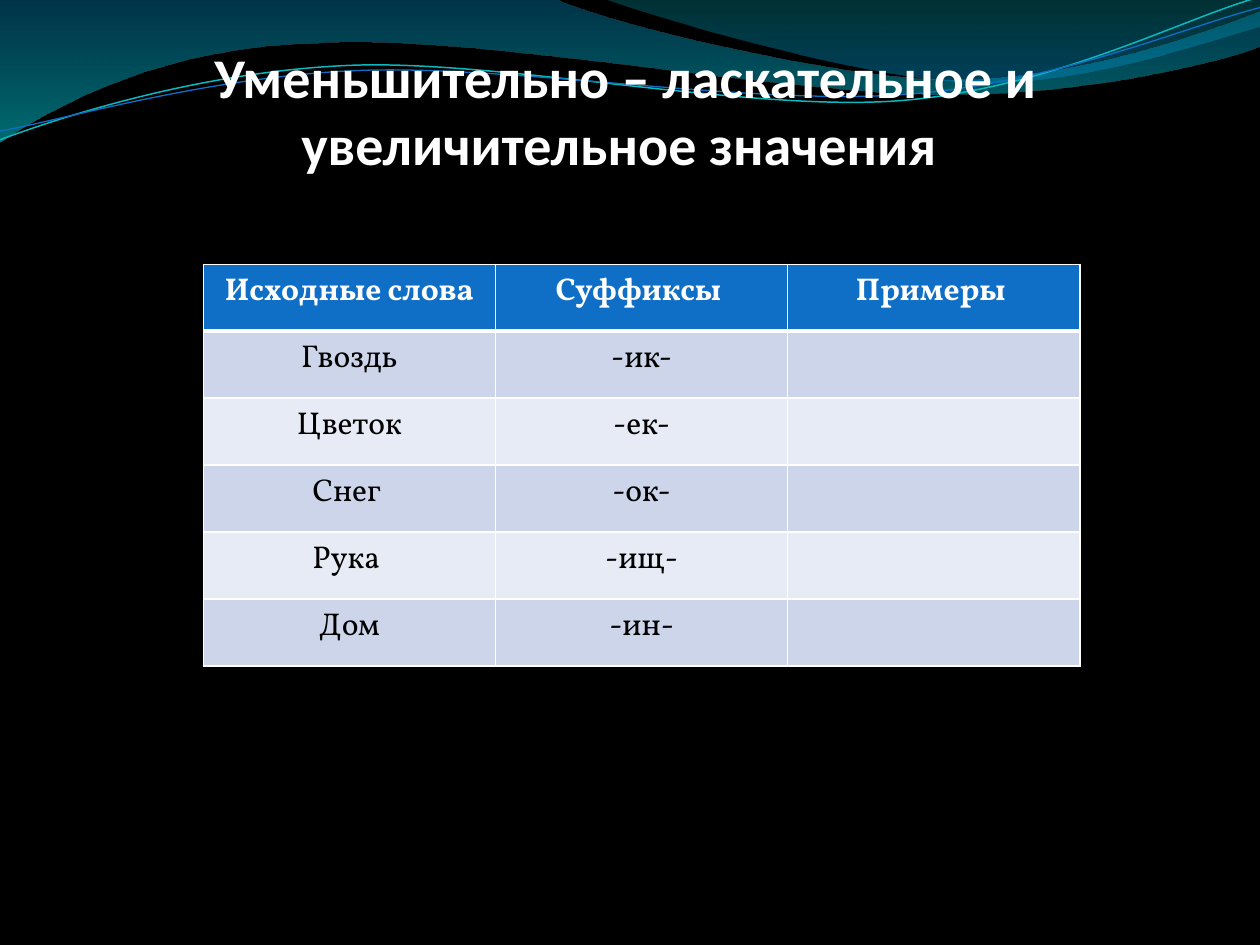
from lxml import etree
from pptx import Presentation
from pptx import util as u
from pptx.dml.color import RGBColor
from pptx.enum import text
from pptx.oxml.ns import qn

TITLE = "Уменьшительно – ласкательное и увеличительное значения "
ROWS = [
    ("Исходные слова", "Суффиксы ", "Примеры "),
    ("Гвоздь", "-ик-", ""),
    ("Цветок", "-ек-", ""),
    ("Снег ", "-ок-", ""),
    ("Рука ", "-ищ-", ""),
    ("Дом", "-ин-", ""),
]
HEAD, BANDS = "0F6FC6", ("CCD5EA", "E7EBF5")

# Outlines: a pair is a straight step, six numbers are a cubic curve.
# Gradient stops: position, colour, opacity in percent.
WAVES = [
    ([(0, 0), (316.8, -0.7), (342.7, 12.2, 478, 45.4, 545.8, 45.4),
      (614.2, 45.4, 689.8, 18.7, 720, 6.5), (720.7, 25.9),
      (709.9, 31.7, 626.4, 54.7, 537.1, 54),
      (447.8, 54, 275, 20.2, 185, 24.5),
      (92.9, 25.9, 33.1, 59.8, -0.7, 81.4), (0, 0)],
     [(0, "0074A1", 45), (1, "00C6CF", 55)]),
    ([(344.9, -0.7), (366.5, 7.9, 491, 44.6, 553.7, 46.8),
      (616.3, 49.7, 691.9, 23, 720, 15.1), (720, 0), (344.9, -0.7)],
     [(0, "00A1A9", 30), (0.8, "008BBF", 45)]),
]
LINES = [
    ([(0, 79.9), (34.6, 67, 113.8, 41, 199.4, 37.4),
      (284.4, 33.8, 427, 64.1, 513.4, 57.6),
      (599.8, 51.1, 675.4, 10.8, 718.6, -1.4)], "0AB8BF", 0.85),
    ([(0, 74.9), (33.8, 69.1, 118.1, 43.9, 203.8, 40.3),
      (290.2, 36.7, 429.8, 60.5, 516.2, 54),
      (601.9, 48.2, 677.5, 15.1, 720, 4.3)], "0F6FC6", 0.75),
]


def rgb(hex):
    return RGBColor.from_string(hex)


def draw(segs, close):
    """Lay every point as a straight step, then join threes into curves."""
    pts = [(u.Pt(s[i]), u.Pt(s[i + 1])) for s in segs
           for i in range(0, len(s), 2)]
    pen = slide.shapes.build_freeform(*pts[0])
    pen.add_line_segments(pts[1:], close=close)
    shape = pen.convert_to_shape()
    shape.shadow.inherit = False
    steps = iter(list(shape._element.iter(qn("a:lnTo"))))
    for seg in segs[1:]:
        step = next(steps)
        if len(seg) == 6:
            step.addprevious(curve := etree.Element(qn("a:cubicBezTo")))
            for part in (step, next(steps), next(steps)):
                curve.append(part[0])
                part.getparent().remove(part)
    return shape


def style(par, font, size, color, bold):
    par.alignment = text.PP_ALIGN.CENTER
    f = par.font
    f.name, f.size, f.bold = font, u.Pt(size), bold
    f.color.rgb = rgb(color)


def edge(cell, side, width):
    line = etree.SubElement(cell._tc.get_or_add_tcPr(), qn("a:ln" + side),
                            w=str(u.Pt(width)))
    fill = etree.SubElement(line, qn("a:solidFill"))
    etree.SubElement(fill, qn("a:srgbClr"), val="FFFFFF")


deck = Presentation()
deck.slide_width, deck.slide_height = u.Pt(720), u.Pt(540)
slide = deck.slides.add_slide(deck.slide_layouts[6])
back = slide.background.fill
back.solid()
back.fore_color.rgb = rgb("000000")

# Waves along the top
for segs, stops in WAVES:
    wave = draw(segs, True)
    wave.line.fill.background()
    wave.fill.gradient()
    wave.fill.gradient_angle = 270
    for stop, (pos, color, alpha) in zip(wave.fill.gradient_stops, stops):
        stop.position = pos
        stop.color.rgb = rgb(color)
        tint = stop._gs.find(qn("a:srgbClr"))
        etree.SubElement(tint, qn("a:alpha"), val=str(alpha * 1000))

# Thin lines over the waves
for segs, color, width in LINES:
    thread = draw(segs, False)
    thread.fill.background()
    thread.line.color.rgb = rgb(color)
    thread.line.width = u.Pt(width)

# Title
box = slide.shapes.add_textbox(u.Pt(50.4), u.Pt(67.2), u.Pt(615.6), u.Pt(33.8))
frame = box.text_frame
frame.word_wrap = True
frame.vertical_anchor = text.MSO_ANCHOR.BOTTOM
frame.margin_left = frame.margin_top = frame.margin_bottom = 0
frame.margin_right = u.Pt(1.4)
frame.text = TITLE
style(frame.paragraphs[0], "Calibri", 32, "FFFFFF", True)

# Table
WIDE, HIGH = 167, 38.25
grid = slide.shapes.add_table(
    len(ROWS), len(ROWS[0]), u.Pt(116.15), u.Pt(151),
    u.Pt(WIDE * len(ROWS[0])), u.Pt(HIGH * len(ROWS))).table
for col in grid.columns:
    col.width = u.Pt(WIDE)
for r, words in enumerate(ROWS):
    grid.rows[r].height = u.Pt(HIGH)
    top = r == 0
    for c, word in enumerate(words):
        cell = grid.cell(r, c)
        if word:
            cell.text = word
        style(cell.text_frame.paragraphs[0], "Vollkorn", 18,
              "FFFFFF" if top else "000000", top)
        for side in "LRTB":
            thick = (r, side) in ((0, "B"), (1, "T"))
            edge(cell, side, 3 if thick else 1)
        cell.fill.solid()
        cell.fill.fore_color.rgb = rgb(HEAD if top else BANDS[(r - 1) % 2])

deck.save("out.pptx")
